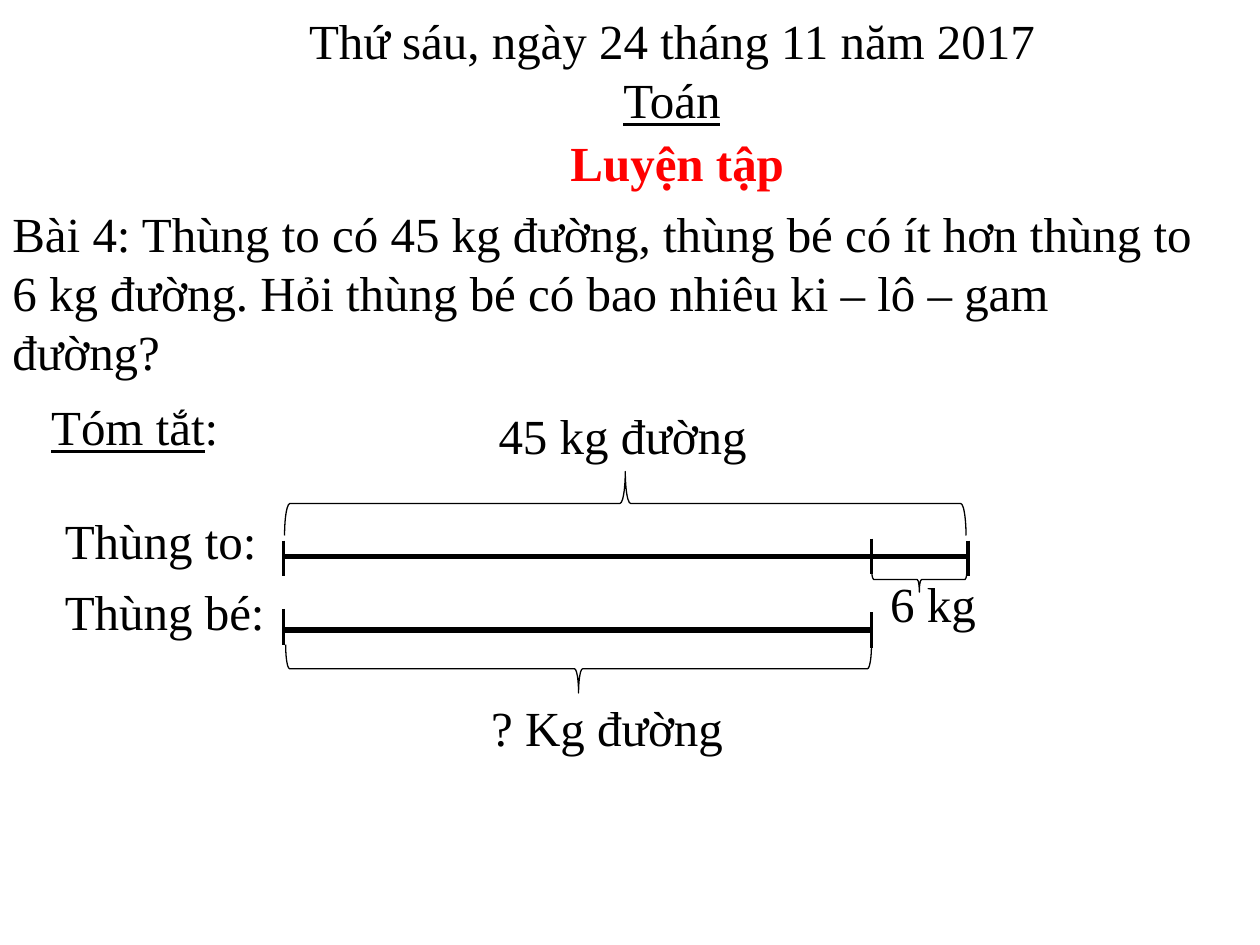
"""Builds a maths lesson slide with a bar-model word problem."""
from dataclasses import dataclass

from lxml.etree import SubElement
from pptx import Presentation
from pptx.dml.color import RGBColor
from pptx.enum.shapes import MSO_CONNECTOR, MSO_SHAPE
from pptx.enum.text import MSO_ANCHOR, MSO_AUTO_SIZE as AutoSize, PP_ALIGN as Align
from pptx.oxml.ns import qn
from pptx.slide import Slide
from pptx.util import Inches, Pt

BLACK = RGBColor(0, 0, 0)
RED = RGBColor(255, 0, 0)
FONT = "Times New Roman"
COLUMNS, ROWS = 120, 90
CELL = Inches(10) // COLUMNS
START, SMALL_END, BIG_END = 27, 83, 92
BIG_ROW, SMALL_ROW = 53, 60
TICK = 3.4


@dataclass(frozen=True)
class Label:
    text: str
    col: float
    row: float
    cols: float
    rows: float = 6.8
    underlined: str = ""
    color: RGBColor = BLACK
    bold: bool = False
    wrap: bool = False
    align: Align = Align.LEFT


@dataclass(frozen=True)
class Brace:
    preset: MSO_SHAPE
    start: float
    end: float
    row: float
    rows: float


@dataclass(frozen=True)
class Segment:
    start: tuple[float, float]
    end: tuple[float, float]
    weight: float


LABELS = (
    Label("Luyện tập", 53, 12, 23, color=RED, bold=True, align=Align.CENTER),
    Label("Bài 4: Thùng to có 45 kg đường, thùng bé có ít hơn thùng to 6 kg đường. "
          "Hỏi thùng bé có bao nhiêu ki – lô – gam đường?", 0, 18.8, 116, 18.1, wrap=True),
    Label(":", 3.7, 37.2, 18.5, underlined="Tóm tắt"),
    Label("Thùng to:", 5, 48, 22),
    Label("Thùng bé:", 5, 54.8, 22.8),
    Label("45 kg đường", 46.3, 38, 26.3),
    Label("6 kg", 83.6, 54, 10.7),
    Label("? Kg đường", 45.6, 65.8, 24.7),
)
BARS = (
    Segment((START, BIG_ROW), (BIG_END, BIG_ROW), 3),
    Segment((START, SMALL_ROW), (SMALL_END, SMALL_ROW), 3),
)
TICKS = tuple(
    Segment((col, row), (col, row + TICK), 2.25)
    for col, row in ((START, 51.5), (BIG_END + 0.15, 51.5), (START, 58),
                     (SMALL_END, 58.3), (SMALL_END, 51.3))
)
BRACES = (
    Brace(MSO_SHAPE.LEFT_BRACE, START + 0.1, BIG_END, 44.9, 6.1),
    Brace(MSO_SHAPE.RIGHT_BRACE, SMALL_END, BIG_END + 0.1, 54, 2.4),
    Brace(MSO_SHAPE.RIGHT_BRACE, START + 0.2, SMALL_END, 61.4, 4.6),
)


def grid(count: float) -> int:
    """Convert grid cells to EMU."""
    return round(count * CELL)


def set_font(paragraph, color: RGBColor = BLACK, bold: bool = False) -> None:
    """Apply the lesson's type style to a paragraph."""
    font = paragraph.font
    font.name, font.size, font.bold = FONT, Pt(28), bold
    font.color.rgb = color


def add_underlined(paragraph, text: str) -> None:
    """Append an underlined run."""
    run = paragraph.add_run()
    run.text = text
    run.font.underline = True


def fill_title(slide: Slide) -> None:
    """Place the date and subject in the title placeholder."""
    title = slide.shapes.title
    title.left, title.top, title.width, title.height = map(grid, (13, -3, 102, 19.3))
    frame = title.text_frame
    frame.auto_size = AutoSize.NONE
    frame.vertical_anchor = MSO_ANCHOR.MIDDLE
    heading = frame.paragraphs[0]
    heading.alignment = Align.CENTER
    set_font(heading)
    heading.add_run().text = "Thứ sáu, ngày 24 tháng 11 năm 2017"
    heading.add_line_break()
    add_underlined(heading, "Toán")


def draw_label(slide: Slide, label: Label) -> None:
    """Draw one text label."""
    box = slide.shapes.add_textbox(*map(grid, (label.col, label.row, label.cols, label.rows)))
    frame = box.text_frame
    frame.word_wrap = label.wrap
    frame.auto_size = AutoSize.SHAPE_TO_FIT_TEXT
    paragraph = frame.paragraphs[0]
    paragraph.alignment = label.align
    set_font(paragraph, label.color, label.bold)
    if label.underlined:
        add_underlined(paragraph, label.underlined)
    paragraph.add_run().text = label.text


def draw_segment(slide: Slide, segment: Segment) -> None:
    """Draw one bar or tick."""
    ends = map(grid, segment.start + segment.end)
    line = slide.shapes.add_connector(MSO_CONNECTOR.STRAIGHT, *ends)
    line.line.color.rgb = BLACK
    line.line.width = Pt(segment.weight)
    SubElement(line._element.spPr, qn("a:effectLst"))


def draw_brace(slide: Slide, brace: Brace) -> None:
    """Draw a brace turned a quarter to span its columns."""
    span = brace.end - brace.start
    left = (brace.start + brace.end - brace.rows) / 2
    top = brace.row + (brace.rows - span) / 2
    shape = slide.shapes.add_shape(brace.preset, *map(grid, (left, top, brace.rows, span)))
    shape.rotation = 90
    shape.shadow.inherit = False
    shape.fill.background()
    shape.line.color.rgb = BLACK
    shape.line.width = Pt(0.75)


def main() -> None:
    """Build and save the slide."""
    deck = Presentation()
    deck.slide_width, deck.slide_height = grid(COLUMNS), grid(ROWS)
    slide = deck.slides.add_slide(deck.slide_layouts.get_by_name("Title Only"))
    fill_title(slide)
    for segment in BARS + TICKS:
        draw_segment(slide, segment)
    for brace in BRACES:
        draw_brace(slide, brace)
    for label in LABELS:
        draw_label(slide, label)
    deck.save("out.pptx")


if __name__ == "__main__":
    main()
